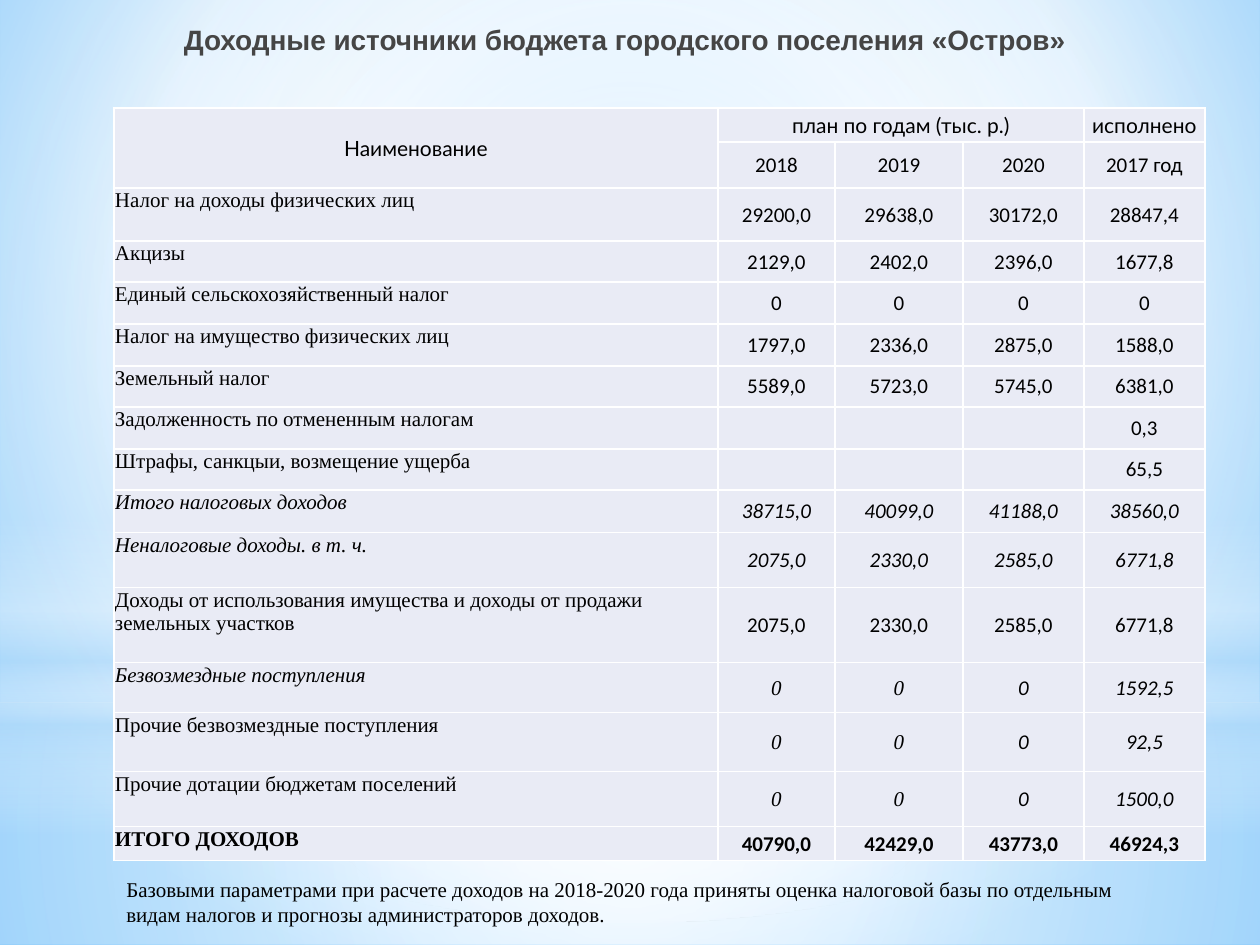
from dataclasses import dataclass

from pptx import Presentation
from pptx.dml.color import RGBColor as RGB
from pptx.enum.shapes import MSO_SHAPE as Kind
from pptx.enum.text import MSO_ANCHOR as Anchor, PP_ALIGN as Align
from pptx.oxml import parse_xml
from pptx.oxml.ns import nsdecls
from pptx.util import Pt

PX = 914400 // 126
BLACK = RGB(0x00, 0x00, 0x00)
GREY = RGB(0x45, 0x45, 0x45)
WHITE = RGB(0xFF, 0xFF, 0xFF)
CELL = RGB(0xE9, 0xEB, 0xF5)
PALE = RGB(0xB4, 0xDC, 0xFA)
SKY = RGB(0x9E, 0xD5, 0xFF)
BLUE = RGB(0x5B, 0xB9, 0xFF)
SERIF, SANS, HEAD = "Times New Roman", "Calibri", "Lato"

MID = (50, 50, 50, 50)
Stop = tuple[int, RGB, int]  # place, colour, opacity in percent


@dataclass
class Glow:
    kind: Kind
    top: int
    high: int
    stops: list[Stop]
    focus: tuple | None = MID  # None means top to bottom


@dataclass
class Row:
    high: int
    label: str
    nums: tuple = ()
    slant: bool = False  # italic label
    lean: bool = False  # italic numbers
    bold: bool = False
    serif: int = 0  # number of leading values set in serif


GLOWS = [
    Glow(Kind.RECTANGLE, 703, 242, [(0, WHITE, 91), (37, WHITE, 76), (100, PALE, 79)]),
    Glow(Kind.RECTANGLE, 0, 703, [(0, WHITE, 89), (48, WHITE, 62), (100, PALE, 79)]),
    Glow(Kind.RECTANGLE, 519, 315, [(0, WHITE, 0), (29, WHITE, 30), (45, PALE, 40),
                                    (55, WHITE, 26), (65, PALE, 60), (100, WHITE, 0)], None),
    Glow(Kind.OVAL, 220, 703, [(0, WHITE, 100), (56, WHITE, 0)]),
]

COLS = [604, 117, 128, 121, 121]
TOP = [34, 46]
ROWS = [
    Row(53, "Налог на доходы физических лиц", ("29200,0", "29638,0", "30172,0", "28847,4")),
    Row(41, "Акцизы", ("2129,0", "2402,0", "2396,0", "1677,8")),
    Row(42, "Единый сельскохозяйственный налог", ("0", "0", "0", "0")),
    Row(42, "Налог на имущество физических лиц", ("1797,0", "2336,0", "2875,0", "1588,0")),
    Row(41, "Земельный налог", ("5589,0", "5723,0", "5745,0", "6381,0")),
    Row(42, "Задолженность по отмененным налогам", ("", "", "", "0,3")),
    Row(41, "Штрафы, санкцыи, возмещение ущерба", ("", "", "", "65,5")),
    Row(43, "Итого налоговых доходов", ("38715,0", "40099,0", "41188,0", "38560,0"), True, True),
    Row(55, "Неналоговые доходы. в т. ч.", ("2075,0", "2330,0", "2585,0", "6771,8"), True, True),
    Row(75, "Доходы от использования имущества и доходы от продажи земельных участков",
        ("2075,0", "2330,0", "2585,0", "6771,8")),
    Row(50, "Безвозмездные поступления", ("0", "0", "0", "1592,5"), True, True, serif=2),
    Row(59, "Прочие безвозмездные поступления", ("0", "0", "0", "92,5"), lean=True, serif=2),
    Row(55, "Прочие дотации бюджетам поселений", ("0", "0", "0", "1500,0"), lean=True, serif=2),
    Row(34, "ИТОГО ДОХОДОВ", ("40790,0", "42429,0", "43773,0", "46924,3"), bold=True),
]


def box(*lens: int) -> list[int]:
    return [n * PX for n in lens]


def blend(fill, root, stops: list[Stop], focus: tuple | None) -> None:
    """Give a fill a circular or a vertical gradient."""
    fill.gradient()
    old = root.xpath(".//a:gradFill")[0]
    marks = "".join(
        f'<a:gs pos="{at * 1000}"><a:srgbClr val="{tone}">'
        f'<a:alpha val="{dense * 1000}"/></a:srgbClr></a:gs>'
        for at, tone, dense in stops)
    if focus:
        rect = " ".join(f'{s}="{n * 1000}"' for s, n in zip("ltrb", focus))
        way = f'<a:path path="circle"><a:fillToRect {rect}/></a:path>'
    else:
        way = '<a:lin ang="5400000" scaled="0"/>'
    new = parse_xml(f'<a:gradFill {nsdecls("a")} rotWithShape="1">'
                    f'<a:gsLst>{marks}</a:gsLst>{way}</a:gradFill>')
    old.getparent().replace(old, new)


def glow(slide, part: Glow) -> None:
    shape = slide.shapes.add_shape(part.kind, *box(0, part.top, 1260, part.high))
    shape.shadow.inherit = False
    shape.line.fill.background()
    blend(shape.fill, shape.element, part.stops, part.focus)


def write(para, text: str, face: str, size: int = 12, tone: RGB = BLACK,
          bold: bool = False, slant: bool = False, align: Align = Align.LEFT) -> None:
    para.text = text
    para.alignment = align
    font = para.font
    font.name, font.size, font.bold, font.italic = face, Pt(size), bold, slant
    font.color.rgb = tone


def edge(cell) -> None:
    """Fill a cell and rule it in white."""
    cell.fill.solid()
    cell.fill.fore_color.rgb = CELL
    cell.margin_left = cell.margin_right = cell.margin_top = PX
    cell.margin_bottom = 0
    props = cell._tc.get_or_add_tcPr()
    for spot, side in enumerate(("lnL", "lnR", "lnT", "lnB")):
        props.insert(spot, parse_xml(
            f'<a:{side} {nsdecls("a")} w="12700"><a:solidFill>'
            f'<a:srgbClr val="{WHITE}"/></a:solidFill></a:{side}>'))


def put(cell, text: str, face: str, **look) -> None:
    cell.vertical_anchor = Anchor.MIDDLE
    write(cell.text_frame.paragraphs[0], text, face, align=Align.CENTER, **look)


def grid(slide) -> None:
    highs = TOP + [row.high for row in ROWS]
    frame = slide.shapes.add_table(len(highs), len(COLS),
                                   *box(114, 108, sum(COLS), sum(highs)))
    table = frame.table
    table.first_row = table.horz_banding = False
    for col, wide in zip(table.columns, COLS):
        col.width = wide * PX
    for line, high in zip(table.rows, highs):
        line.height = high * PX
    for cell in table.iter_cells():
        edge(cell)

    # Two header rows
    table.cell(0, 0).merge(table.cell(1, 0))
    table.cell(0, 1).merge(table.cell(0, 3))
    for col, text in ((0, "Наименование"), (1, "план по годам (тыс. р.)"), (4, "исполнено")):
        put(table.cell(0, col), text, HEAD)
    for col, text in enumerate(("2018", "2019", "2020", "2017 год"), 1):
        put(table.cell(1, col), text, SANS)

    # Income rows
    for at, row in enumerate(ROWS, len(TOP)):
        write(table.cell(at, 0).text_frame.paragraphs[0], row.label, SERIF,
              bold=row.bold, slant=row.slant)
        for col, num in enumerate(row.nums, 1):
            put(table.cell(at, col), num, SERIF if col <= row.serif else SANS,
                bold=row.bold, slant=row.lean)


def main() -> None:
    deck = Presentation()
    deck.slide_width, deck.slide_height = box(1260, 945)
    slide = deck.slides.add_slide(deck.slide_layouts[5])

    # Backdrop
    blend(slide.background.fill, slide.element,
          [(0, SKY, 100), (60, WHITE, 100), (100, BLUE, 100)], (20, 10, 20, 60))
    for part in GLOWS:
        glow(slide, part)

    # Title, brought in front of the backdrop
    title = slide.shapes.title
    title.left, title.top, title.width, title.height = box(148, 16, 954, 92)
    title.text_frame.vertical_anchor = Anchor.TOP
    write(title.text_frame.paragraphs[0],
          "Доходные источники бюджета городского поселения «Остров»",
          "Arial", 16, GREY, bold=True, align=Align.CENTER)
    tree = title.element.getparent()
    tree.append(title.element)

    grid(slide)

    # Note below the table
    note = slide.shapes.add_textbox(*box(114, 870, 1022, 65)).text_frame
    note.word_wrap = True
    write(note.paragraphs[0],
          "Базовыми параметрами при расчете доходов на 2018-2020 года приняты оценка "
          "налоговой базы по отдельным видам налогов и прогнозы администраторов доходов.", SERIF)

    deck.save("out.pptx")


if __name__ == "__main__":
    main()
